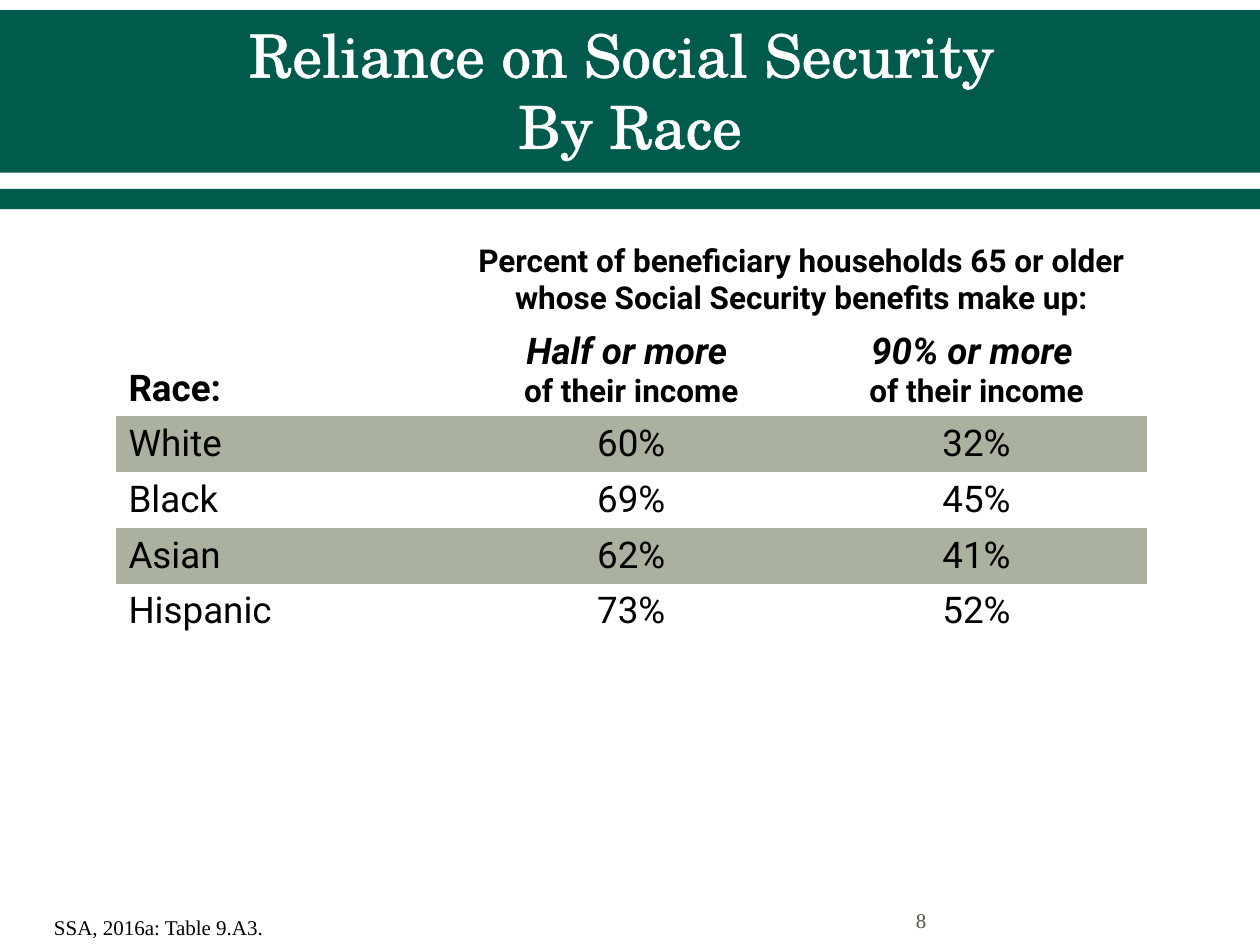
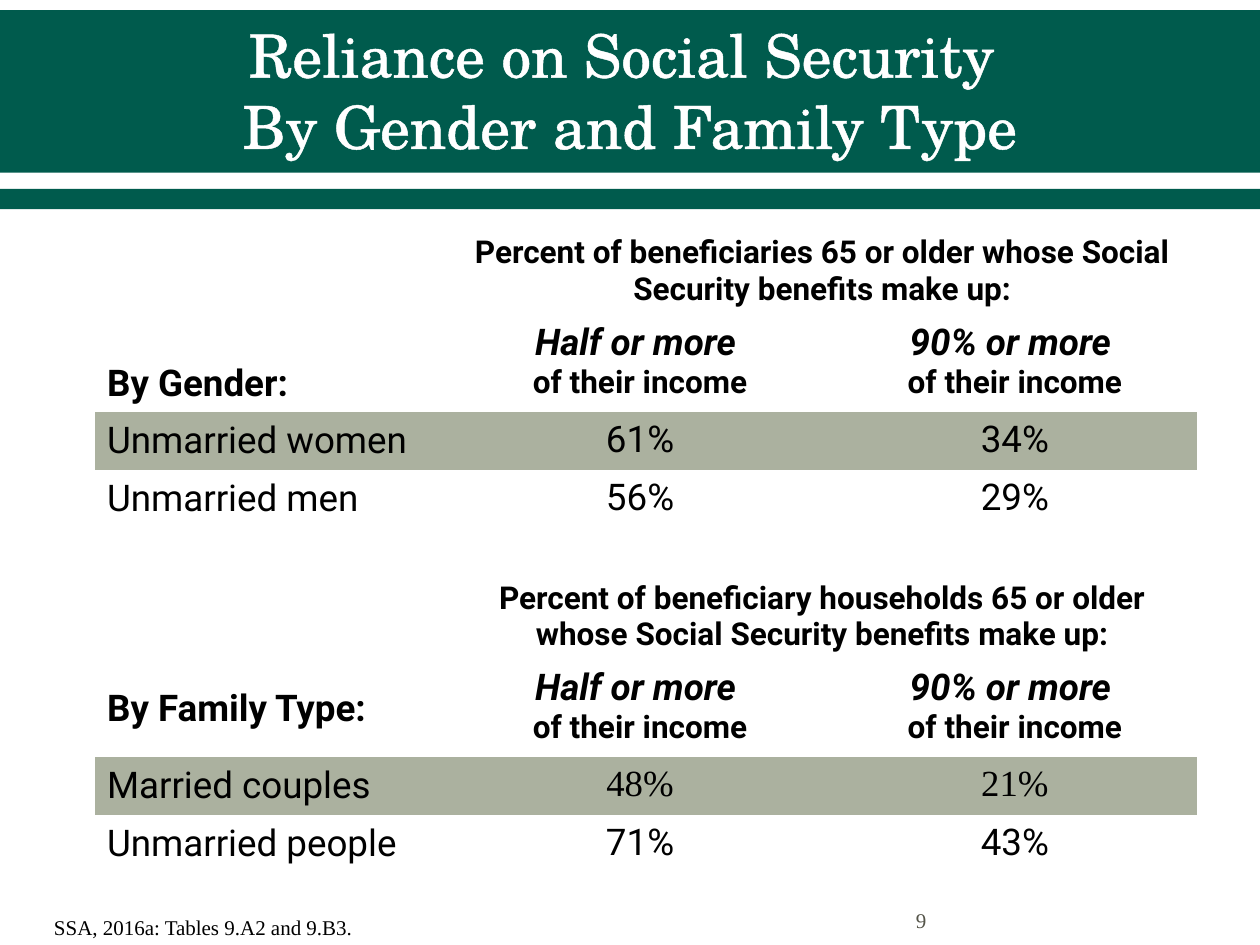
from lxml.etree import SubElement
from pptx import Presentation
from pptx.dml.color import RGBColor as Rgb
from pptx.enum.shapes import MSO_SHAPE as Shape
from pptx.enum.text import MSO_ANCHOR as Anchor, MSO_AUTO_SIZE as AutoSize, PP_ALIGN as Align
from pptx.oxml.ns import qn
from pptx.util import Inches, Pt

COLORS = {"green": "005B4D", "sage": "ABB19F", "white": "FFFFFF",
          "black": "000000", "gray": "55554A"}
TITLE_FONT, TABLE_FONT, NOTE_FONT = "TeX Gyre Schola", "Roboto", "Times New Roman"
PLAIN_TABLE_STYLE = "{2D5ABB26-0587-4C30-8999-92F81FD0307C}"

deck = Presentation()
deck.slide_width, deck.slide_height = Inches(10), Inches(7.5)
COLUMN, ROW = deck.slide_width / 100, deck.slide_height / 75

HOUSEHOLDS = ("Percent of beneficiary households 65 or older "
              "whose Social Security benefits make up:")
BENEFICIARIES = ("Percent of beneficiaries 65 or older "
                 "whose Social Security benefits make up:")
SHARES = [f"{share} or more \nof their income" for share in ("Half", "90%")]

# Each table row: kind, height in grid rows, first cell, other cells
PAGES = [
    {
        "title": "Reliance on Social Security \vBy Race",
        "number": "8",
        "source": "SSA, 2016a: Table 9.A3.",
        "corner": (9.2, 18.8),
        "widths": (27, 27.8, 27),
        "rows": [
            ("heading", 6.9, "", [HOUSEHOLDS]),
            ("shares", 7.3, "Race:", SHARES),
            ("shaded", 4.4, "White", ["60%", "32%"]),
            ("plain", 4.4, "Black", ["69%", "45%"]),
            ("shaded", 4.4, "Asian", ["62%", "41%"]),
            ("plain", 4.4, "Hispanic", ["73%", "52%"]),
        ],
    },
    {
        "title": "Reliance on Social Security \vBy Gender and Family Type",
        "number": "9",
        "source": "SSA, 2016a: Tables 9.A2 and 9.B3.",
        "corner": (7.5, 15.8),
        "widths": (28, 30.6, 28.9),
        "rows": [
            ("heading", 9.2, "", [BENEFICIARIES]),
            ("shares", 7.7, "By Gender:", SHARES),
            ("shaded", 4.6, "Unmarried women", ["61%", "34%"]),
            ("plain", 4.6, "Unmarried men", ["56%", "29%"]),
            ("heading", 2.8, "", [""]),
            ("heading", 7.7, "", [HOUSEHOLDS]),
            ("shares", 7.7, "By Family Type:", SHARES),
            ("shaded", 4.6, "Married couples", ["48%", "21%"]),
            ("plain", 4.6, "Unmarried people", ["71%", "43%"]),
        ],
    },
]


def grid(left, top, width, height):
    """Turn grid columns and rows into slide lengths."""
    return (round(left * COLUMN), round(top * ROW),
            round(width * COLUMN), round(height * ROW))


def style(para, size, font, color="black", bold=False, italic=False, align=Align.LEFT):
    para.alignment = align
    for span in para.runs:
        span.font.size, span.font.name = Pt(size), font
        span.font.bold, span.font.italic = bold, italic
        span.font.color.rgb = Rgb.from_string(COLORS[color])


for content in PAGES:
    page = deck.slides.add_slide(deck.slide_layouts[5])

    for top, height in ((0.8, 12.9), (15, 1.6)):
        band = page.shapes.add_shape(Shape.RECTANGLE, *grid(0, top, 100, height))
        band.shadow.inherit = False
        band.fill.solid()
        band.fill.fore_color.rgb = Rgb.from_string(COLORS["green"])
        band.line.fill.background()

    title = page.shapes.title
    page.shapes._spTree.append(title._element)  # in front of the bands
    title.left, title.top, title.width, title.height = grid(5, 1.7, 90, 10.8)
    title.text_frame.text = content["title"]
    title.text_frame.auto_size = AutoSize.NONE
    title.text_frame.vertical_anchor = Anchor.MIDDLE
    style(title.text_frame.paragraphs[0], 34, TITLE_FONT, "white", align=Align.CENTER)
    for span in title.text_frame.paragraphs[0].runs:
        properties = span._r.get_or_add_rPr()
        outline = SubElement(properties, qn("a:ln"), w=str(int(Pt(1.1))))
        fill = SubElement(outline, qn("a:solidFill"))
        SubElement(fill, qn("a:srgbClr"), val=COLORS["white"])
        properties.insert(0, outline)  # the outline must precede the fill

    rows, widths = content["rows"], content["widths"]
    heights = [height for _, height, _, _ in rows]
    table = page.shapes.add_table(
        len(rows), len(widths),
        *grid(*content["corner"], sum(widths), sum(heights))).table
    table.first_row = table.horz_banding = False
    table._tbl.tblPr.find(qn("a:tableStyleId")).text = PLAIN_TABLE_STYLE
    for column, width in zip(table.columns, widths):
        column.width = round(width * COLUMN)

    for index, (kind, height, label, values) in enumerate(rows):
        table.rows[index].height = round(height * ROW)
        if kind == "heading":
            table.cell(index, 1).merge(table.cell(index, 2))
        for position, cell in enumerate(table.rows[index].cells):
            texts = [label, *values]
            cell.text = texts[position] if position < len(texts) else ""
            if kind == "shaded":
                cell.fill.solid()
                cell.fill.fore_color.rgb = Rgb.from_string(COLORS["sage"])
            else:
                cell.fill.background()
            if kind == "heading" or label in ("Race:", "By Gender:") and position == 0:
                cell.vertical_anchor = Anchor.BOTTOM
            elif position == 0:
                cell.vertical_anchor = Anchor.MIDDLE
            serif = label == "Married couples" and position > 0
            for line, para in enumerate(cell.text_frame.paragraphs):
                small = kind == "heading" or line == 1
                style(para, 18 if small else 21, NOTE_FONT if serif else TABLE_FONT,
                      bold=kind in ("heading", "shares"),
                      italic=kind == "shares" and position > 0 and line == 0,
                      align=Align.CENTER if position else Align.LEFT)
                if not para.runs:  # keeps empty cells from stretching the row
                    SubElement(para._p, qn("a:endParaRPr"), sz="1000")

    for text, place, color, anchor in (
            (content["number"], (71.7, 71, 23.3, 4), "gray", Anchor.MIDDLE),
            (content["source"], (3.3, 72.1, 50.8, 3), "black", Anchor.TOP)):
        box = page.shapes.add_textbox(*grid(*place))
        box.text_frame.word_wrap = True
        box.text_frame.vertical_anchor = anchor
        box.text_frame.text = text
        style(box.text_frame.paragraphs[0], 12, NOTE_FONT, color)

deck.save("out.pptx")
